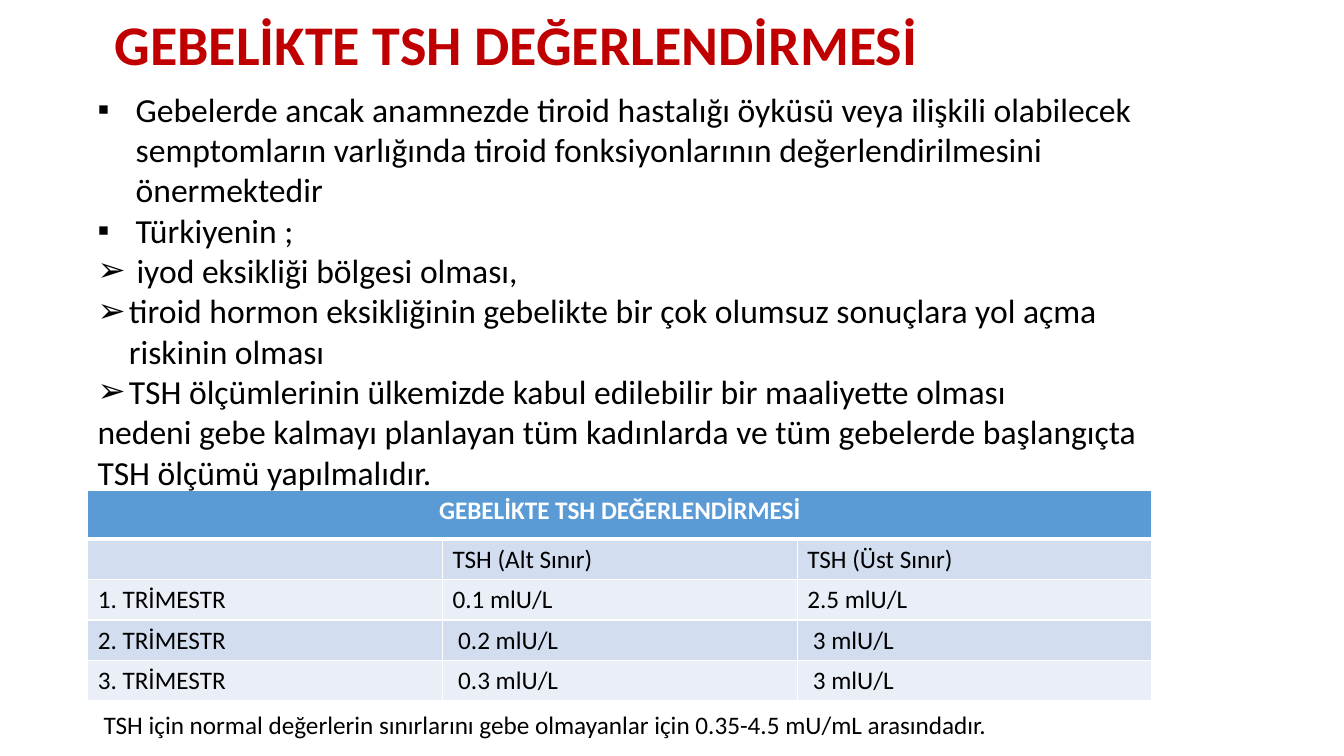
from dataclasses import dataclass

from lxml import etree
from pptx import Presentation
from pptx.dml.color import RGBColor
from pptx.enum.text import MSO_ANCHOR, PP_ALIGN
from pptx.oxml.ns import qn
from pptx.util import Cm, Pt

TOP = MSO_ANCHOR.TOP
MIDDLE = MSO_ANCHOR.MIDDLE
LEFT = PP_ALIGN.LEFT
CENTER = PP_ALIGN.CENTER

HEADING = "GEBELİKTE TSH DEĞERLENDİRMESİ"
BODY = [
    ("▪", 0.96, "Gebelerde ancak anamnezde tiroid hastalığı öyküsü veya ilişkili olabilecek "
                "semptomların varlığında tiroid fonksiyonlarının değerlendirilmesini önermektedir"),
    ("▪", 0.96, "Türkiyenin ;"),
    ("➢", 0.79, " iyod eksikliği bölgesi olması,"),
    ("➢", 0.79, "tiroid hormon eksikliğinin gebelikte bir çok olumsuz sonuçlara yol açma "
                "riskinin olması"),
    ("➢", 0.79, "TSH ölçümlerinin ülkemizde kabul edilebilir bir maaliyette olması"),
    (None, 0, "nedeni gebe kalmayı planlayan tüm kadınlarda ve tüm gebelerde başlangıçta "
              "TSH ölçümü yapılmalıdır."),
]
LIMITS = [
    (HEADING, "", ""),
    ("", "TSH (Alt Sınır)", "TSH (Üst Sınır)"),
    ("1. TRİMESTR", "0.1 mlU/L", "2.5 mlU/L"),
    ("2. TRİMESTR", " 0.2 mlU/L", " 3 mlU/L"),
    ("3. TRİMESTR", " 0.3 mlU/L", " 3 mlU/L"),
]
FOOTNOTE = "TSH için normal değerlerin sınırlarını gebe olmayanlar için 0.35-4.5 mU/mL arasındadır."


@dataclass(frozen=True)
class Theme:
    font: str = "Calibri"
    title: str = "C00000"
    ink: str = "000000"
    white: str = "FFFFFF"
    header: str = "5B9BD5"
    bands: tuple = ("EAEFF7", "D2DEEF")
    title_size: int = 40
    body_size: int = 24
    small_size: int = 18


def write(para, text, *, font, size, color, bold=False, align=LEFT, spacing=1.0):
    para.alignment = align
    para.line_spacing = spacing
    span = para.add_run()
    span.text = text
    span.font.name = font
    span.font.size = Pt(size)
    span.font.bold = bold
    span.font.color.rgb = RGBColor.from_string(color)


class SlideBuilder:
    def __init__(self, page, theme):
        self.page = page
        self.theme = theme

    def frame(self, left, top, width, height, anchor=TOP):
        box = self.page.shapes.add_textbox(Cm(left), Cm(top), Cm(width), Cm(height))
        box.text_frame.word_wrap = True
        box.text_frame.vertical_anchor = anchor
        return box.text_frame

    def text(self, text, area, *, anchor=TOP, **style):
        write(self.frame(*area, anchor).paragraphs[0], text, font=self.theme.font, **style)

    def bullets(self, items, area):
        frame = self.frame(*area)
        for index, (mark, indent, text) in enumerate(items):
            para = frame.add_paragraph() if index else frame.paragraphs[0]
            write(para, text, font=self.theme.font, size=self.theme.body_size,
                  color=self.theme.ink)
            if mark:
                properties = para._p.get_or_add_pPr()
                properties.set("marL", str(Cm(indent)))
                properties.set("indent", str(-Cm(indent)))
                etree.SubElement(properties, qn("a:buFont"), typeface="Arial")
                etree.SubElement(properties, qn("a:buChar"), char=mark)

    def borders(self, cell, bottom):
        properties = cell._tc.get_or_add_tcPr()
        for side, points in (("L", 1), ("R", 1), ("T", 1), ("B", bottom)):
            line = etree.SubElement(properties, qn(f"a:ln{side}"), w=str(Pt(points)))
            fill = etree.SubElement(line, qn("a:solidFill"))
            etree.SubElement(fill, qn("a:srgbClr"), val=self.theme.white)

    def table(self, rows, area, header_height, row_height):
        theme = self.theme
        lengths = [Cm(value) for value in area]
        table = self.page.shapes.add_table(len(rows), len(rows[0]), *lengths).table
        for row_index, values in enumerate(rows):
            is_header = row_index == 0
            table.rows[row_index].height = Cm(header_height if is_header else row_height)
            fill = theme.header if is_header else theme.bands[row_index % 2]
            for column_index, value in enumerate(values):
                cell = table.cell(row_index, column_index)
                self.borders(cell, 3 if is_header else 1)
                cell.fill.solid()
                cell.fill.fore_color.rgb = RGBColor.from_string(fill)
                if value:
                    write(cell.text_frame.paragraphs[0], value, font=theme.font,
                          size=theme.small_size, bold=is_header,
                          color=theme.white if is_header else theme.ink,
                          align=CENTER if is_header else LEFT)
        table.cell(0, 0).merge(table.cell(0, len(rows[0]) - 1))


def main():
    deck = Presentation()
    deck.slide_width, deck.slide_height = Cm(33.87), Cm(19.05)
    theme = Theme()
    builder = SlideBuilder(deck.slides.add_slide(deck.slide_layouts[6]), theme)
    builder.text(HEADING, (2.64, -0.64, 29.21, 3.68), anchor=MIDDLE,
                 size=theme.title_size, color=theme.title, bold=True, spacing=0.9)
    builder.table(LIMITS, (2.21, 12.37, 26.82, 5.1), header_height=1.22, row_height=0.97)
    builder.text(FOOTNOTE, (2.36, 17.75, 31.5, 1.03),
                 size=theme.small_size, color=theme.ink)
    builder.bullets(BODY, (2.21, 2.11, 27.86, 10.52))
    deck.save("out.pptx")


if __name__ == "__main__":
    main()
